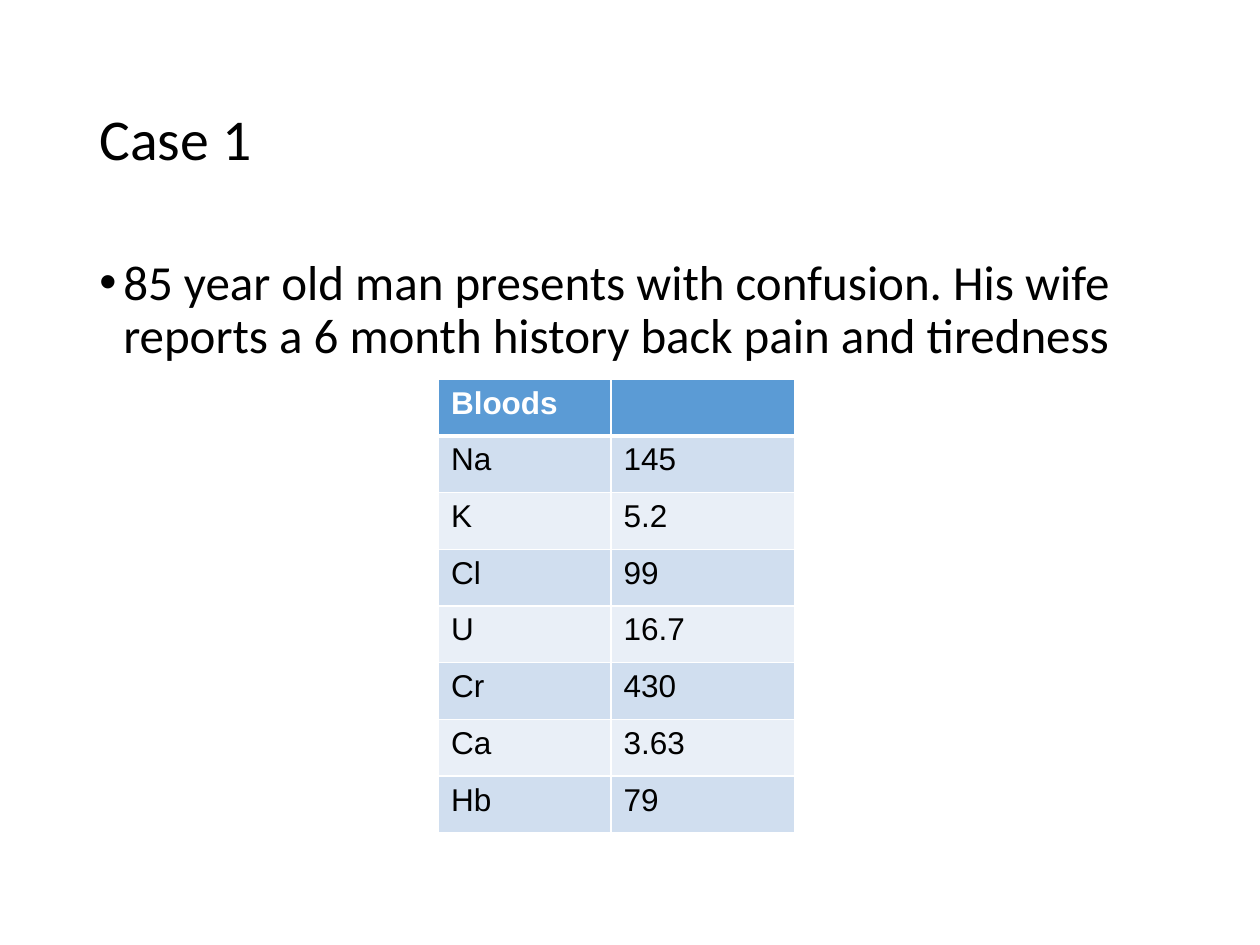
"""Build the Case 1 slide with its blood results table."""
from typing import NamedTuple

from lxml import etree
from pptx import Presentation
from pptx import util as u
from pptx.dml.color import RGBColor
from pptx.enum import text
from pptx.oxml import ns


class Result(NamedTuple):
    test: str
    value: str


class Box(NamedTuple):
    left: float
    top: float
    width: float
    height: float


RESULTS = [
    Result("Bloods", ""),
    Result("Na", "145"),
    Result("K", "5.2"),
    Result("Cl", "99"),
    Result("U", "16.7"),
    Result("Cr", "430"),
    Result("Ca", "3.63"),
    Result("Hb", "79"),
]
COLUMN_WIDTHS = (1.37, 1.46)
ROW_HEIGHT = 0.45
HEADER_FILL = "5B9BD5"
BAND_FILLS = ("E9EFF7", "D0DEEF")
WHITE, BLACK = "FFFFFF", "000000"


def color(value: str) -> RGBColor:
    return RGBColor.from_string(value)


def inches(box: Box) -> list:
    return [u.Inches(length) for length in box]


def write(frame, words: str, *, size: float, font="Calibri", fill=BLACK,
          bold=False, spacing=1.0, anchor=text.MSO_ANCHOR.TOP, bullet="", indent=0.0):
    frame.word_wrap = True
    frame.auto_size = text.MSO_AUTO_SIZE.NONE
    frame.vertical_anchor = anchor
    paragraph = frame.paragraphs[0]
    paragraph.alignment = text.PP_ALIGN.LEFT
    paragraph.line_spacing = spacing
    paragraph.space_before = u.Pt(0)
    if bullet:
        properties = paragraph._p.get_or_add_pPr()
        properties.set("marL", str(u.Inches(indent)))
        properties.set("indent", str(-u.Inches(indent)))
        bullet_font = etree.SubElement(properties, ns.qn("a:buFont"))
        bullet_font.set("typeface", "Arial")
        etree.SubElement(properties, ns.qn("a:buChar")).set("char", bullet)
    run = paragraph.add_run()
    run.text = words
    run.font.name = font
    run.font.size = u.Pt(size)
    run.font.bold = bold
    run.font.color.rgb = color(fill)


def set_border(cell, side: str, width: float):
    line = etree.SubElement(cell._tc.get_or_add_tcPr(), ns.qn(f"a:ln{side}"))
    line.set("w", str(u.Pt(width)))
    solid = etree.SubElement(line, ns.qn("a:solidFill"))
    etree.SubElement(solid, ns.qn("a:srgbClr")).set("val", WHITE)


def add_bloods(slide, left: float, top: float, results: list[Result]):
    area = Box(left, top, sum(COLUMN_WIDTHS), ROW_HEIGHT * len(results))
    bloods = slide.shapes.add_table(len(results), len(COLUMN_WIDTHS), *inches(area)).table
    for column, width in zip(bloods.columns, COLUMN_WIDTHS):
        column.width = u.Inches(width)
    for row, result in enumerate(results):
        header = row == 0
        for column, words in enumerate(result):
            cell = bloods.cell(row, column)
            for side in "LRTB":
                thick = (header and side == "B") or (row == 1 and side == "T")
                set_border(cell, side, 3 if thick else 1)
            cell.fill.solid()
            cell.fill.fore_color.rgb = color(HEADER_FILL if header else BAND_FILLS[row % 2])
            if words:
                write(cell.text_frame, words, size=18, font="Arial",
                      fill=WHITE if header else BLACK, bold=header)


def main():
    deck = Presentation()
    deck.slide_width, deck.slide_height = u.Inches(10), u.Inches(7.5)
    slide = deck.slides.add_slide(deck.slide_layouts[5])

    title = slide.shapes.title
    title.left, title.top, title.width, title.height = inches(Box(0.69, 0.4, 8.62, 1.45))
    write(title.text_frame, "Case 1", size=33, spacing=0.9, anchor=text.MSO_ANCHOR.MIDDLE)

    history = slide.shapes.add_textbox(*inches(Box(0.69, 2, 8.62, 4.76)))
    write(history.text_frame,
          "85 year old man presents with confusion. "
          "His wife reports a 6 month history back pain and tiredness",
          size=28, spacing=0.9, bullet="•", indent=0.19)

    add_bloods(slide, 3.48, 3.01, RESULTS)
    deck.save("out.pptx")


if __name__ == "__main__":
    main()
